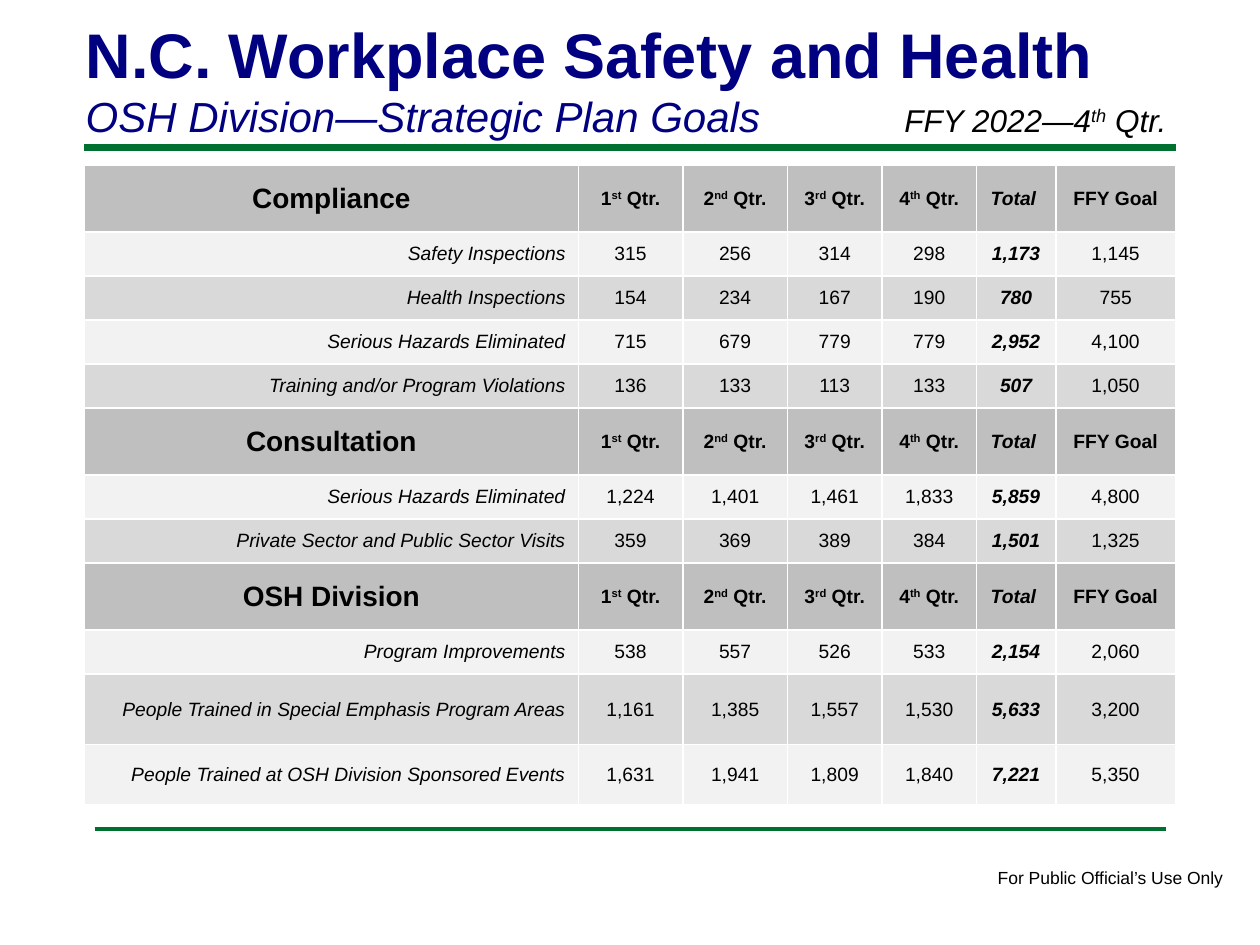
import pptx
import pptx.dml.color
import pptx.enum.shapes
import pptx.enum.text
import pptx.oxml
import pptx.oxml.ns
import pptx.util

Inches = pptx.util.Inches
ALIGN = pptx.enum.text.PP_ALIGN
ANCHOR = pptx.enum.text.MSO_ANCHOR

FONT = "Arial"
BLACK, NAVY, GREEN, WHITE = "000000", "000080", "007030", "FFFFFF"
HEADER_FILL = "BFBFBF"
ROW_FILLS = ["F2F2F2", "D9D9D9"]
HEADINGS = ["1^st^ Qtr.", "2^nd^ Qtr.", "3^rd^ Qtr.", "4^th^ Qtr.", "Total ", "FFY Goal"]
TOTAL_COLUMN = 5
COLUMN_WIDTHS = [3.92, 0.83, 0.83, 0.75, 0.75, 0.63, 0.95]
HEADER_HEIGHT, ROW_HEIGHT = 0.53, 0.35
TALL_ROWS = {
    "People Trained in Special Emphasis Program Areas": 0.56,
    "People Trained at OSH Division Sponsored Events": 0.48,
}
SECTIONS = {
    "Compliance": [
        ["Safety Inspections", "315", "256", "314", "298", "1,173", "1,145"],
        ["Health Inspections", "154", "234", "167", "190", "780", "755"],
        ["Serious Hazards Eliminated", "715", "679", "779", "779", "2,952", "4,100"],
        ["Training and/or Program Violations", "136", "133", "113", "133", "507", "1,050"],
    ],
    "Consultation": [
        ["Serious Hazards Eliminated", "1,224", "1,401", "1,461", "1,833", "5,859", "4,800"],
        ["Private Sector and Public Sector Visits", "359", "369", "389", "384", "1,501", "1,325"],
    ],
    "OSH Division": [
        ["Program Improvements", "538", "557", "526", "533", "2,154", "2,060"],
        ["People Trained in Special Emphasis Program Areas",
         "1,161", "1,385", "1,557", "1,530", "5,633", "3,200"],
        ["People Trained at OSH Division Sponsored Events",
         "1,631", "1,941", "1,809", "1,840", "7,221", "5,350"],
    ],
}


def rgb(color):
    """Return the colour for a hex string."""
    return pptx.dml.color.RGBColor.from_string(color)


def write(paragraph, text, size, color=BLACK, bold=False, italic=False, align=ALIGN.LEFT):
    """Fill a paragraph, raising the parts of the text between carets."""
    for index, part in enumerate(text.split("^")):
        run = paragraph.add_run()
        run.text = part
        if index % 2:
            run.font._element.set("baseline", "30000")
    paragraph.alignment = align
    font = paragraph.font
    font.name, font.size = FONT, pptx.util.Pt(size)
    font.bold, font.italic = bold, italic
    font.color.rgb = rgb(color)


def add_title(slide):
    """Place the title and its subtitle line in the title placeholder."""
    title = slide.shapes.title
    title.left, title.top = Inches(0.58), Inches(0.06)
    title.width, title.height = Inches(8.25), Inches(1.11)
    frame = title.text_frame
    frame.word_wrap = True
    frame.auto_size = pptx.enum.text.MSO_AUTO_SIZE.NONE
    frame.vertical_anchor = ANCHOR.BOTTOM
    write(frame.paragraphs[0], "N.C. Workplace Safety and Health", 36, NAVY, bold=True)
    write(frame.add_paragraph(), "OSH Division—Strategic Plan Goals", 24, NAVY, italic=True)


def add_text(slide, text, left, top, width, height, size, italic=False, wrap=True):
    """Add a one-paragraph text box."""
    box = slide.shapes.add_textbox(Inches(left), Inches(top), Inches(width), Inches(height))
    box.text_frame.word_wrap = wrap
    write(box.text_frame.paragraphs[0], text, size, italic=italic)


def add_rule(slide, left, right, top, weight):
    """Add a horizontal green line."""
    rule = slide.shapes.add_connector(
        pptx.enum.shapes.MSO_CONNECTOR.STRAIGHT,
        Inches(left), Inches(top), Inches(right), Inches(top))
    rule.line.color.rgb = rgb(GREEN)
    rule.line.width = pptx.util.Pt(weight)
    rule._element.spPr.append(pptx.oxml.parse_xml(
        f"<a:effectLst {pptx.oxml.ns.nsdecls('a')}/>"))


def style_cell(cell, fill):
    """Give a cell white borders, a fill and centred anchoring."""
    properties = cell._tc.get_or_add_tcPr()
    for side in "LRTB":
        properties.append(pptx.oxml.parse_xml(
            f"<a:ln{side} {pptx.oxml.ns.nsdecls('a')} w='12700'><a:solidFill>"
            f"<a:srgbClr val='{WHITE}'/></a:solidFill></a:ln{side}>"))
    cell.fill.solid()
    cell.fill.fore_color.rgb = rgb(fill)
    cell.vertical_anchor = ANCHOR.MIDDLE


def fill_row(table, row, values, fill, header):
    """Write one header or data row."""
    height = HEADER_HEIGHT if header else TALL_ROWS.get(values[0], ROW_HEIGHT)
    table.rows[row].height = Inches(height)
    for column, value in enumerate(values):
        cell = table.cell(row, column)
        style_cell(cell, fill)
        label, total = column == 0, column == TOTAL_COLUMN
        write(cell.text_frame.paragraphs[0], value,
              16 if header and label else 11,
              bold=header or total,
              italic=total or (label and not header),
              align=ALIGN.RIGHT if label and not header else ALIGN.CENTER)


def add_goals_table(slide):
    """Add the table of quarterly results, section by section."""
    row_count = sum(1 + len(rows) for rows in SECTIONS.values())
    table = slide.shapes.add_table(
        row_count, len(COLUMN_WIDTHS),
        Inches(0.67), Inches(1.31), Inches(8.67), Inches(5.11)).table
    table.first_row = table.horz_banding = False
    for column, width in zip(table.columns, COLUMN_WIDTHS):
        column.width = Inches(width)
    row = 0
    for section, records in SECTIONS.items():
        fill_row(table, row, [section] + HEADINGS, HEADER_FILL, header=True)
        for index, record in enumerate(records):
            fill_row(table, row + 1 + index, record, ROW_FILLS[index % 2], header=False)
        row += 1 + len(records)


def main():
    """Build and save the slide."""
    presentation = pptx.Presentation()
    presentation.slide_width, presentation.slide_height = Inches(10), Inches(7.5)
    slide = presentation.slides.add_slide(presentation.slide_layouts[5])
    add_rule(slide, 0.67, 9.33, 1.17, 4)
    add_rule(slide, 0.75, 9.25, 6.58, 2)
    add_text(slide, "For Public Official’s Use Only", 7.82, 6.83, 2.01, 0.27, 10, wrap=False)
    add_title(slide)
    add_goals_table(slide)
    add_text(slide, "FFY 2022—4^th^ Qtr.", 7.08, 0.75, 2.5, 0.4, 18, italic=True)
    presentation.save("out.pptx")


if __name__ == "__main__":
    main()
